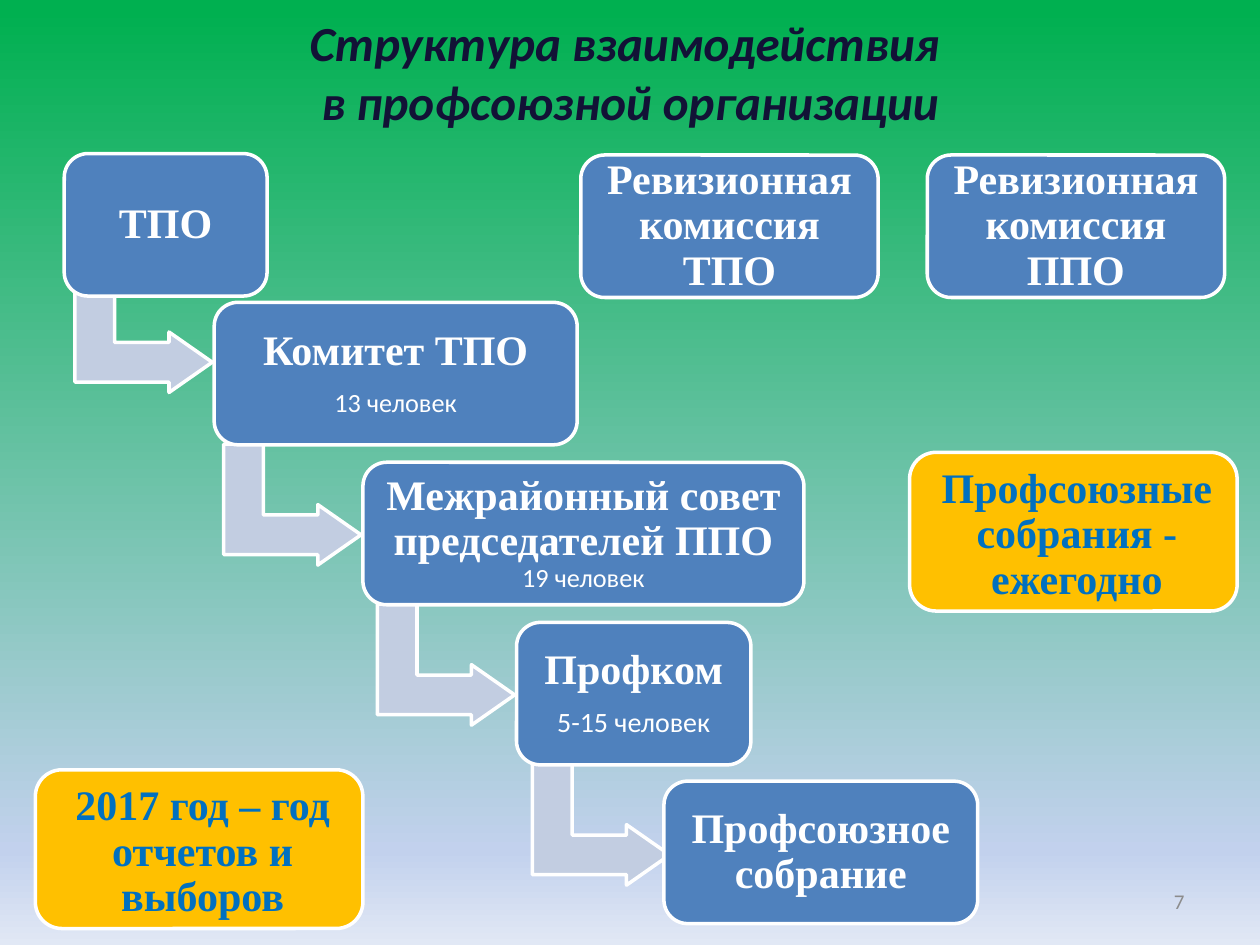
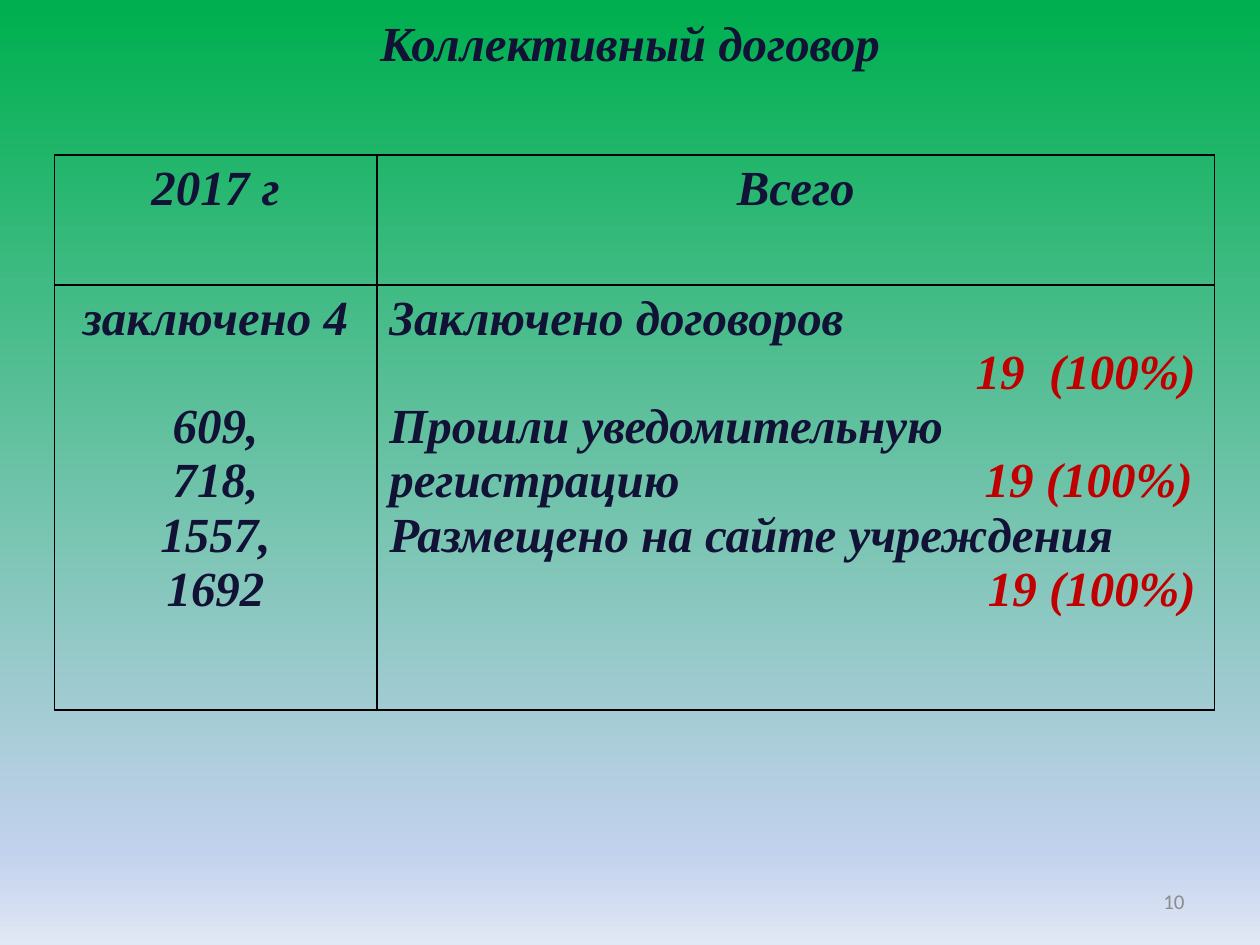
from lxml.etree import SubElement
from pptx import Presentation
from pptx.dml.color import RGBColor
from pptx.enum.shapes import MSO_SHAPE as SHAPE
from pptx.enum.text import MSO_ANCHOR as ANCHOR, PP_ALIGN as ALIGN
from pptx.oxml import parse_xml
from pptx.oxml.ns import nsdecls, qn
from pptx.util import Pt

COLORS = {
    "text": "121236", "number": "8C8C8C", "white": "FFFFFF", "black": "000000",
    "box": "4F81BD", "arrow": "C2CDE1", "note": "FFC000", "note_text": "0070C0",
    "accent": "C00000",
}
BACKGROUND = [(1, "00B050"), (90, "C2D1ED"), (100, "E1E8F5")]
SERIF, SANS = "Times New Roman", "Calibri"


def rgb(name):
    return RGBColor.from_string(COLORS[name])


class Deck:
    """Shared style plus the slide being built."""

    def __init__(self):
        self.prs = Presentation()
        self.prs.slide_width, self.prs.slide_height = Pt(720), Pt(540)
        self.s = None

    def slide(self, title, number, title_font):
        self.s = self.prs.slides.add_slide(self.prs.slide_layouts[6])
        self.background()
        lines = title.split("\n")
        tf = self.text_box(0, 3.6, 720, 34 * len(lines) + 7)
        p = tf.paragraphs[0]
        p.alignment = ALIGN.CENTER
        for i, line in enumerate(lines):
            if i:
                p.add_line_break()
            self.run(p, line, 28, title_font, "text", bold=True, italic=True)
        tf = self.text_box(516.2, 500.4, 167.8, 28.8)
        tf.vertical_anchor = ANCHOR.MIDDLE
        tf.paragraphs[0].alignment = ALIGN.RIGHT
        self.run(tf.paragraphs[0], number, 12, SANS, "number")

    def background(self):
        fill = self.s.background.fill
        fill.gradient()
        fill.gradient_angle = 270
        stops = self.s.background._cSld.find(".//" + qn("a:gsLst"))
        for stop in list(stops):
            stops.remove(stop)
        for pos, color in BACKGROUND:
            stop = SubElement(stops, qn("a:gs"), pos=str(pos * 1000))
            SubElement(stop, qn("a:srgbClr"), val=color)

    def text_box(self, x, y, w, h):
        tf = self.s.shapes.add_textbox(Pt(x), Pt(y), Pt(w), Pt(h)).text_frame
        tf.word_wrap = True
        return tf

    def run(self, p, text, size, font, color, bold=False, italic=False):
        r = p.add_run()
        r.text = text
        f = r.font
        f.size, f.name, f.bold, f.italic = Pt(size), font, bold, italic
        f.color.rgb = rgb(color)

    def shape(self, kind, x, y, w, h, fill, adjustments):
        sp = self.s.shapes.add_shape(kind, Pt(x), Pt(y), Pt(w), Pt(h))
        sp.shadow.inherit = False
        sp.fill.solid()
        sp.fill.fore_color.rgb = rgb(fill)
        sp.line.color.rgb = rgb("white")
        sp.line.width = Pt(2)
        for i, value in enumerate(adjustments):
            sp.adjustments[i] = value
        return sp

    def box(self, x, y, w, h, paragraphs, fill="box", color="white", shift=0):
        """Rounded box; each paragraph is a list of (text, size, font) runs."""
        sp = self.shape(SHAPE.ROUNDED_RECTANGLE, x, y, w, h, fill, [0.167])
        tf = sp.text_frame
        tf.word_wrap = True
        tf.vertical_anchor = ANCHOR.MIDDLE
        tf.margin_left = tf.margin_top = Pt(7 + shift)
        tf.margin_right = tf.margin_bottom = Pt(7 - shift)
        for i, runs in enumerate(paragraphs):
            p = tf.add_paragraph() if i else tf.paragraphs[0]
            p.alignment = ALIGN.CENTER
            p.line_spacing = 0.9
            if i < len(paragraphs) - 1:
                p.space_after = Pt(8.4)
            for text, size, font in runs:
                self.run(p, text, size, font, color, bold=font == SERIF)

    def note(self, x, y, text):
        self.box(x, y, 187.2, 90.7, [[(text, 24, SERIF)]], "note", "note_text", shift=2)

    def arrow(self, x, y):
        sp = self.shape(SHAPE.BENT_UP_ARROW, x, y, 69.1, 78.5, "arrow",
                        [0.328, 0.25, 0.358])
        sp.rotation = 90

    def table(self, x, y, widths, heights, rows):
        """Each cell is a list of (text, accent, alignment, space before, tab)."""
        table = self.s.shapes.add_table(len(rows), len(widths), Pt(x), Pt(y),
                                        Pt(sum(widths)), Pt(sum(heights))).table
        table.first_row = table.horz_banding = False
        for col, width in zip(table.columns, widths):
            col.width = Pt(width)
        for row, height, contents in zip(table.rows, heights, rows):
            row.height = Pt(height)
            for cell, paragraphs in zip(row.cells, contents):
                self.cell(cell, paragraphs)
        return table

    def cell(self, cell, paragraphs):
        cell.fill.background()
        tcPr = cell._tc.get_or_add_tcPr()
        for i, side in enumerate("LRTB"):
            tcPr.insert(i, parse_xml(
                f'<a:ln{side} {nsdecls("a")} w="{Pt(1)}"><a:solidFill>'
                f'<a:srgbClr val="{COLORS["black"]}"/></a:solidFill></a:ln{side}>'))
        for i, (text, accent, align, before, tab) in enumerate(paragraphs):
            p = cell.text_frame.add_paragraph() if i else cell.text_frame.paragraphs[0]
            p.alignment = align
            if before:
                p.space_before = Pt(before)
            if tab:
                tabs = SubElement(p._p.get_or_add_pPr(), qn("a:tabLst"))
                SubElement(tabs, qn("a:tab"), pos=str(Pt(tab)), algn="r")
            for part, color in ((text, "text"), (accent, "accent")):
                if part:
                    self.run(p, part, 28, SERIF, color, bold=True, italic=True)


def centered(text, before=0):
    return text, "", ALIGN.CENTER, before, 0


def label(text, tab=0, accent=""):
    return text, accent, ALIGN.LEFT, 0, tab


def total(accent):
    return "", accent, ALIGN.RIGHT, 0, 0


def structure_slide(deck):
    deck.slide("Структура взаимодействия \nв профсоюзной организации", "7", SANS)
    box_h = 81.4

    # Staircase: box left, top, width, text, then left and top of its arrow
    steps = [
        (36.7, 87.8, 115.9, [[("ТПО", 24, SERIF)]], (47.5, 150.5)),
        (122.4, 172.8, 207.4,
         [[("Комитет ТПО", 24, SERIF)], [("13 человек", 15, SANS)]], (132.5, 249.1)),
        (207.4, 264.2, 252,
         [[("Межрайонный совет председателей ППО ", 24, SERIF),
           ("19 человек", 15, SANS)]], (220.3, 340.6)),
        (295.2, 355.7, 133.9,
         [[("Профком", 24, SERIF)], [("5-15 человек", 16, SANS)]], (308.9, 432)),
        (379.4, 446.4, 179.3, [[("Профсоюзное собрание", 24, SERIF)]], None),
    ]
    for x, y, w, paragraphs, arrow in steps:
        if arrow:
            deck.arrow(*arrow)
        deck.box(x, y, w, box_h, paragraphs)

    # Audit commissions
    for x, body in ((331.9, "ТПО"), (529.9, "ППО")):
        deck.box(x, 88.6, 169.9, box_h, [[(f"Ревизионная комиссия {body}", 24, SERIF)]])

    # Notes
    deck.note(20.2, 439.9, "2017 год – год отчетов и выборов")
    deck.note(519.8, 258.5, "Профсоюзные собрания - ежегодно")


def agreement_slide(deck):
    deck.slide("Коллективный договор", "10", SERIF)
    schools = [centered("заключено 4"), centered("609,", before=31),
               centered("718,"), centered("1557,"), centered("1692")]
    totals = [
        label("Заключено договоров"), total("19  (100%)"),
        label("Прошли уведомительную регистрацию\t", tab=459, accent="19 (100%)"),
        label("Размещено на сайте учреждения"), total("19 (100%)"),
    ]
    table = deck.table(31, 88.6, [184.3, 478.8], [74.4, 242.6],
                       [[[centered("2017 г")], [centered("Всего")]],
                        [schools, totals]])
    table.cell(1, 1).margin_right = Pt(10.8)


def main():
    deck = Deck()
    structure_slide(deck)
    agreement_slide(deck)
    deck.prs.save("out.pptx")


if __name__ == "__main__":
    main()
